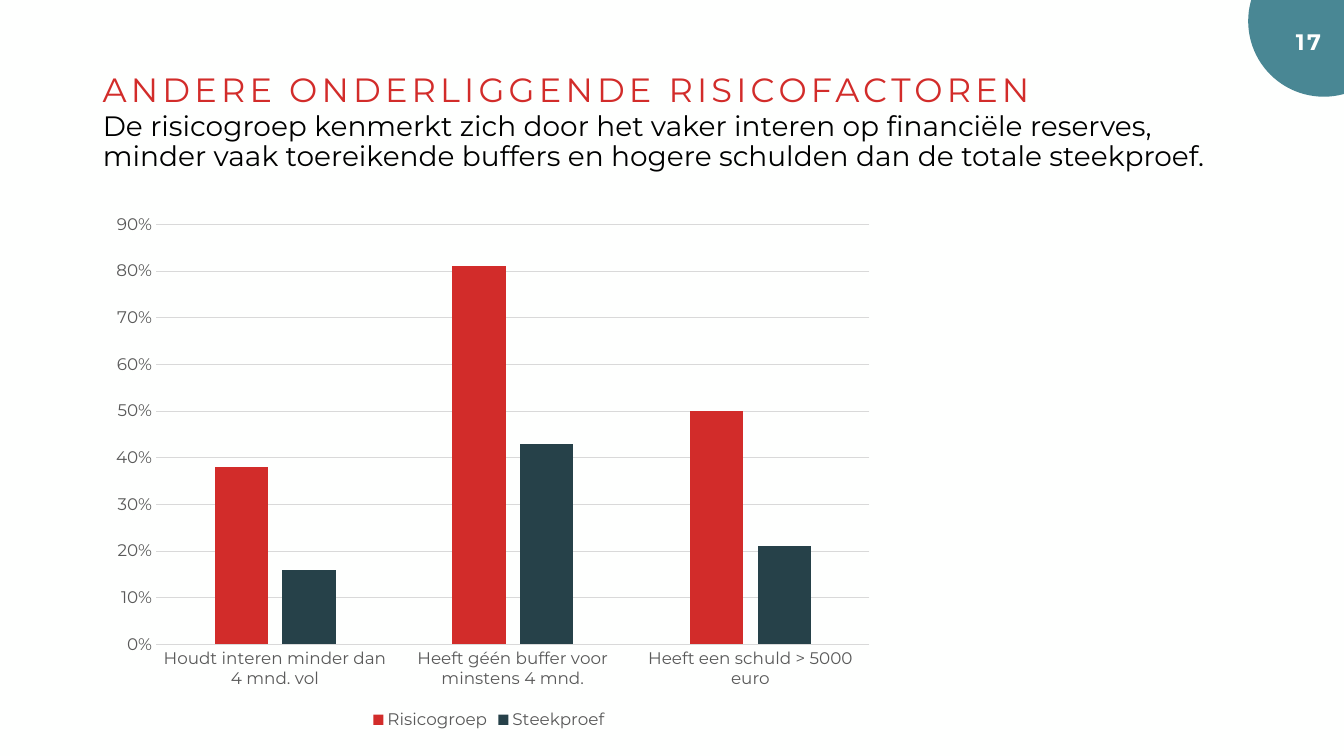
import pptx
import pptx.chart.data
import pptx.dml.color
import pptx.enum.chart
import pptx.enum.shapes
import pptx.enum.text
import pptx.oxml
import pptx.oxml.ns
import pptx.util
from pptx.util import Inches

COLOURS = {
    "paper": "FEFFFE",
    "teal": "498794",
    "red": "D22C2A",
    "navy": "264149",
    "black": "000000",
    "grey": "595959",
    "line": "D9D9D9",
}
FONT = "Montserrat"


def colour(name):
    return pptx.dml.color.RGBColor.from_string(COLOURS[name])


def paint(fill, name):
    fill.solid()
    fill.fore_color.rgb = colour(name)


def format_font(font, size, name, bold=False):
    values = {"name": FONT, "size": pptx.util.Pt(size), "bold": bold}
    for key, value in values.items():
        setattr(font, key, value)
    font.color.rgb = colour(name)


def write_text(shape, text, size, name, bold=False, tracking=0, align="LEFT", anchor="TOP", line_spacing=0.9):
    frame = shape.text_frame
    frame_values = {
        "word_wrap": True,
        "auto_size": pptx.enum.text.MSO_AUTO_SIZE.NONE,
        "vertical_anchor": pptx.enum.text.MSO_ANCHOR[anchor],
    }
    for key, value in frame_values.items():
        setattr(frame, key, value)
    para = frame.paragraphs[0]
    para_values = {
        "alignment": pptx.enum.text.PP_ALIGN[align],
        "line_spacing": line_spacing,
        "space_before": pptx.util.Pt(0),
    }
    for key, value in para_values.items():
        setattr(para, key, value)
    span = para.add_run()
    span.text = text
    format_font(span.font, size, name, bold)
    if tracking:
        span._r.get_or_add_rPr().set("spc", str(int(tracking * 100)))


def add_page_badge(page, left, top, size, number):
    circle = page.shapes.add_shape(pptx.enum.shapes.MSO_SHAPE.OVAL, left, top, size, size)
    circle.shadow.inherit = False
    paint(circle.fill, "teal")
    circle.line.fill.background()
    box = page.shapes.add_textbox(left - Inches(0.99), top + Inches(0.77), Inches(1.81), Inches(0.37))
    write_text(box, number, 16, "paper", bold=True, tracking=1.8, align="RIGHT", anchor="MIDDLE", line_spacing=1)


def add_heading(page, left, top, width, height):
    kicker_height = Inches(0.33)
    title_offset = Inches(0.38)
    title = page.shapes.title
    place = {"left": left, "top": top + title_offset, "width": width, "height": height - title_offset}
    for key, value in place.items():
        setattr(title, key, value)
    write_text(
        title,
        "De risicogroep kenmerkt zich door het vaker interen op financiële reserves, "
        "minder vaak toereikende buffers en hogere schulden dan de totale steekproef.",
        20,
        "black",
    )
    kicker = page.shapes.add_textbox(left, top, width, kicker_height)
    write_text(kicker, "ANDERE ONDERLIGGENDE RISICOFACTOREN", 24, "red", tracking=3)


def set_plot_layout(chart, x, y, w, h):
    plot_area = chart._chartSpace.chart.plotArea
    for old in plot_area.findall(pptx.oxml.ns.qn("c:layout")):
        plot_area.remove(old)
    sizes = "".join(f'<c:{key} val="{value}"/>' for key, value in zip("xywh", (x, y, w, h)))
    layout = pptx.oxml.parse_xml(
        f'<c:layout {pptx.oxml.ns.nsdecls("c")}><c:manualLayout>'
        '<c:layoutTarget val="inner"/><c:xMode val="edge"/><c:yMode val="edge"/>'
        f"{sizes}</c:manualLayout></c:layout>"
    )
    plot_area.insert(0, layout)


def format_line(line):
    paint(line.fill, "line")
    line.width = pptx.util.Pt(0.75)


def add_risk_chart(page, left, top, width, height):
    data = pptx.chart.data.CategoryChartData(number_format="0%")
    data.categories = [
        "Houdt interen minder dan 4 mnd. vol",
        "Heeft géén buffer voor minstens 4 mnd.",
        "Heeft een schuld > 5000 euro",
    ]
    data.add_series("Risicogroep", (0.38, 0.81, 0.5))
    data.add_series("Steekproef", (0.16, 0.43, 0.21))
    kind = pptx.enum.chart.XL_CHART_TYPE.COLUMN_CLUSTERED
    chart = page.shapes.add_chart(kind, left, top, width, height, data).chart
    chart.has_title = False
    format_font(chart.font, 10, "black")

    plot = chart.plots[0]
    for key, value in {"gap_width": 219, "overlap": -27, "vary_by_categories": False}.items():
        setattr(plot, key, value)
    for series, name in zip(plot.series, ("red", "navy")):
        paint(series.format.fill, name)
        series.invert_if_negative = False

    for axis in (chart.category_axis, chart.value_axis):
        axis.major_tick_mark = pptx.enum.chart.XL_TICK_MARK.NONE
        axis.minor_tick_mark = pptx.enum.chart.XL_TICK_MARK.NONE
        format_font(axis.tick_labels.font, 12, "grey")
    format_line(chart.category_axis.format.line)
    values = chart.value_axis
    for key, value in {"minimum_scale": 0, "maximum_scale": 0.9, "major_unit": 0.1}.items():
        setattr(values, key, value)
    values.tick_labels.number_format = "0%"
    values.tick_labels.number_format_is_linked = False
    values.format.line.fill.background()
    format_line(values.major_gridlines.format.line)

    chart.has_legend = True
    chart.legend.position = pptx.enum.chart.XL_LEGEND_POSITION.BOTTOM
    chart.legend.include_in_layout = False
    format_font(chart.legend.font, 12, "grey")
    set_plot_layout(chart, 0.08, 0.03, 0.9, 0.8)


def main():
    deck = pptx.Presentation()
    deck.slide_width = Inches(13.33)
    deck.slide_height = Inches(7.5)
    page = deck.slides.add_slide(deck.slide_layouts.get_by_name("Title Only"))
    paint(page.background.fill, "paper")
    margin = Inches(0.92)
    add_page_badge(page, Inches(12.38), Inches(-0.54), Inches(1.5), "17")
    add_heading(page, margin, Inches(0.68), Inches(11.5), Inches(1.18))
    add_risk_chart(page, margin, Inches(2.07), Inches(7.86), Inches(5.21))
    deck.save("out.pptx")


if __name__ == "__main__":
    main()
